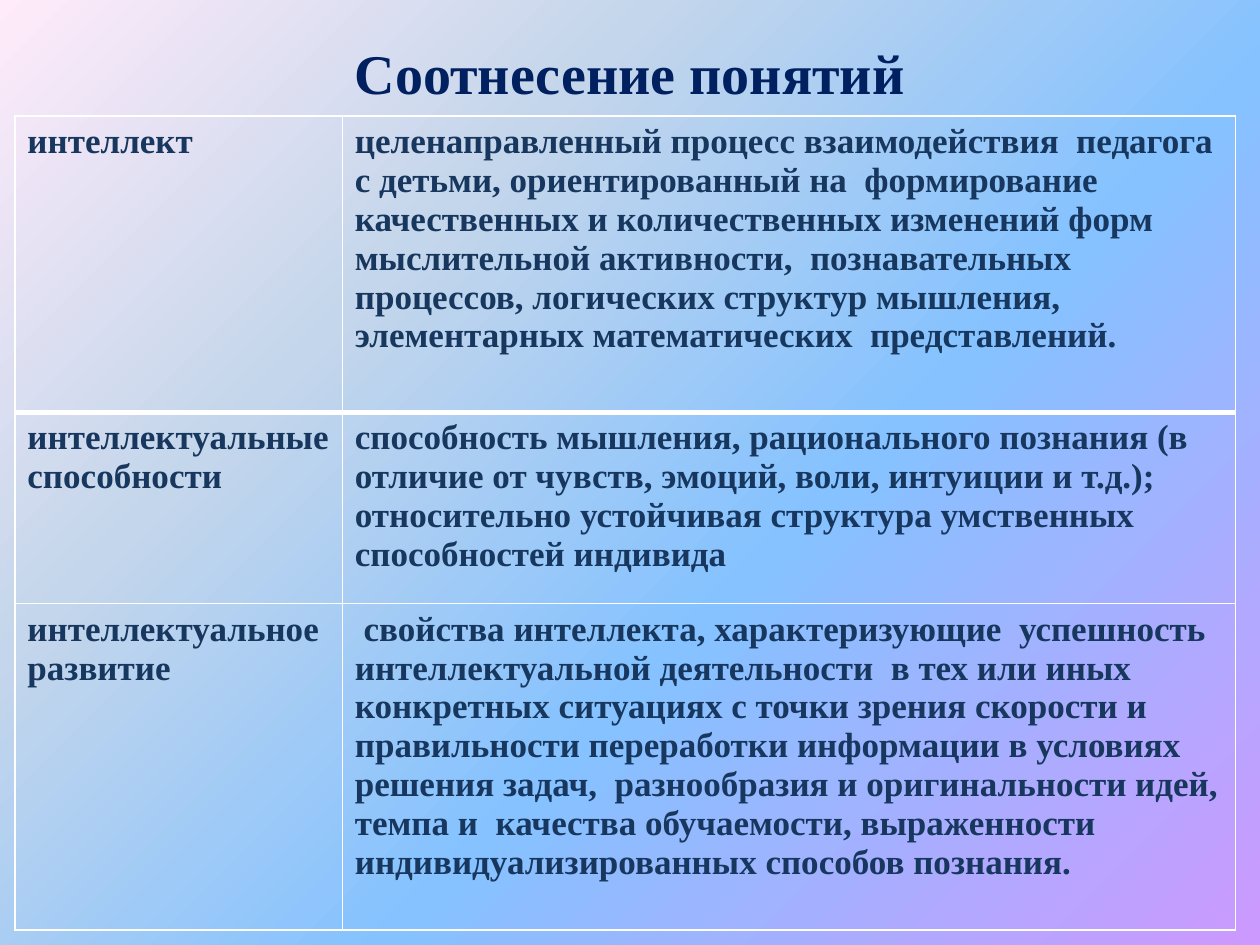
from pptx import Presentation
from pptx.dml.color import RGBColor
from pptx.enum.text import MSO_ANCHOR, PP_ALIGN
from pptx.oxml import parse_xml
from pptx.oxml.ns import nsdecls
from pptx.util import Cm, Pt

COLORS = {
    "title": "002060",
    "text": "17375E",
    "border": "FFFFFF",
    "violet": "CC99FF",
    "blue": "85C2FF",
    "pale": "C4D6EB",
    "pink": "FFEBFA",
}


def write_text(frame, text, size, color, align=PP_ALIGN.LEFT):
    frame.word_wrap = True
    paragraph = frame.paragraphs[0]
    paragraph.alignment = align
    run = paragraph.add_run()
    run.text = text
    run.font.name = "Times New Roman"
    run.font.size = Pt(size)
    run.font.bold = True
    run.font.color.rgb = RGBColor.from_string(COLORS[color])


def set_borders(cell, **widths):
    """Draw the cell borders; widths maps the sides L, R, T, B to points."""
    properties = cell._tc.get_or_add_tcPr()
    for index, (side, width) in enumerate(widths.items()):
        properties.insert(index, parse_xml(
            f'<a:ln{side} {nsdecls("a")} w="{Pt(width)}"><a:solidFill>'
            f'<a:srgbClr val="{COLORS["border"]}"/></a:solidFill></a:ln{side}>'))


presentation = Presentation()
presentation.slide_width = Cm(25.4)
presentation.slide_height = Cm(19.05)
slide = presentation.slides.add_slide(presentation.slide_layouts[6])

# Background gradient, spreading from the bottom right corner
slide.background.fill.gradient()
gradient = slide.element.xpath(".//p:bgPr/a:gradFill")[0]
stops = [(0, "violet", '<a:alpha val="48000"/>'), (40, "blue", ""),
         (70, "pale", ""), (100, "pink", "")]
stop_xml = "".join(
    f'<a:gs pos="{position * 1000}"><a:srgbClr val="{COLORS[color]}">{alpha}</a:srgbClr></a:gs>'
    for position, color, alpha in stops)
gradient.getparent().replace(gradient, parse_xml(
    f'<a:gradFill {nsdecls("a")} rotWithShape="1"><a:gsLst>{stop_xml}</a:gsLst>'
    '<a:path path="circle"><a:fillToRect l="100000" t="100000"/></a:path>'
    '<a:tileRect r="-100000" b="-100000"/></a:gradFill>'))

# Title
title = slide.shapes.add_textbox(Cm(1.27), Cm(0.76), Cm(22.86), Cm(1.37))
title.text_frame.vertical_anchor = MSO_ANCHOR.MIDDLE
write_text(title.text_frame, "Соотнесение понятий", size=32, color="title",
           align=PP_ALIGN.CENTER)

# Table of concepts and their definitions
concepts = [
    ("интеллект",
     "целенаправленный процесс взаимодействия  педагога с детьми, ориентированный на  "
     "формирование качественных и количественных изменений форм мыслительной активности,  "
     "познавательных процессов, логических структур мышления, элементарных математических  "
     "представлений."),
    ("интеллектуальные способности",
     "способность мышления, рационального познания (в отличие от чувств, эмоций, воли, "
     "интуиции и т.д.);  относительно устойчивая структура умственных способностей индивида"),
    ("интеллектуальное развитие",
     " свойства интеллекта, характеризующие  успешность интеллектуальной деятельности  "
     "в тех или иных конкретных ситуациях с точки зрения скорости и правильности переработки "
     "информации в условиях решения задач,  разнообразия и оригинальности идей, темпа и  "
     "качества обучаемости, выраженности  индивидуализированных способов познания."),
]
column_widths = [6.6, 18.01]
row_heights = [5.97, 3.86, 6.58]
table = slide.shapes.add_table(
    len(concepts), len(column_widths), Cm(0.3), Cm(2.34),
    Cm(sum(column_widths)), Cm(sum(row_heights))).table
table.first_row = False
table.horz_banding = False
for column, width in zip(table.columns, column_widths):
    column.width = Cm(width)

for row_index, (concept, height) in enumerate(zip(concepts, row_heights)):
    table.rows[row_index].height = Cm(height)
    for column_index, text in enumerate(concept):
        cell = table.cell(row_index, column_index)
        cell.fill.background()
        write_text(cell.text_frame, text, size=20, color="text")
        set_borders(cell, L=1, R=1, T=3 if row_index == 1 else 1,
                    B=3 if row_index == 0 else 1)

presentation.save("out.pptx")
